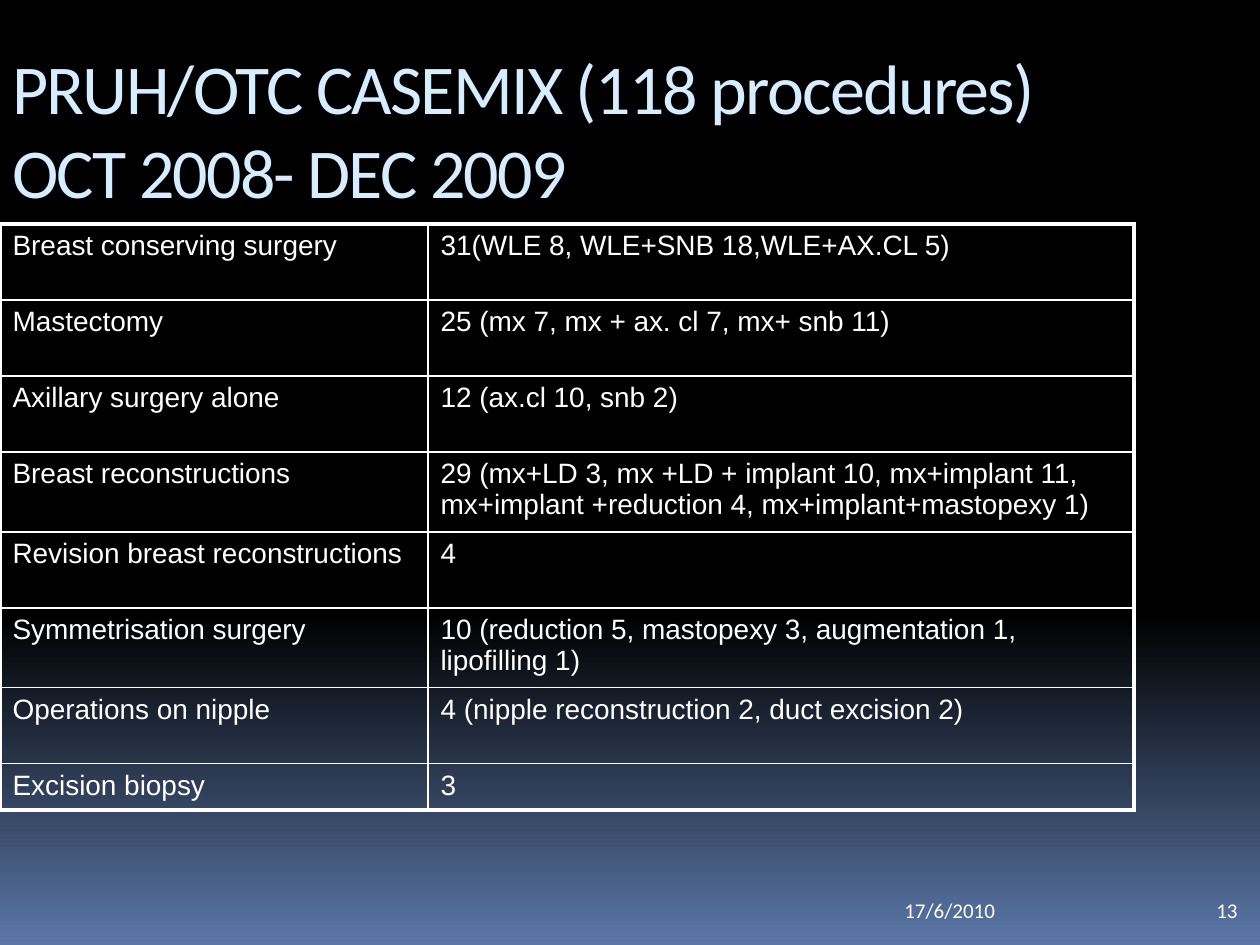
from lxml import etree
from pptx import Presentation
from pptx.dml.color import RGBColor
from pptx.enum.text import MSO_ANCHOR, PP_ALIGN
from pptx.oxml.ns import qn
from pptx.util import Pt

EMU_PER_PX = 914400 // 126
LEFT, RIGHT = PP_ALIGN.LEFT, PP_ALIGN.RIGHT
TOP, MIDDLE = MSO_ANCHOR.TOP, MSO_ANCHOR.MIDDLE
COLORS = {"black": "000000", "blue": "5B77A8", "title": "D6ECFF", "white": "FFFFFF"}
OUTER_BORDER, INNER_BORDER = 2.25, 1
COLUMN_WIDTHS = [428, 706]
ROW_HEIGHTS = [76, 76, 76, 78, 76, 78, 76, 43]
CASEMIX = [
    ("Breast conserving surgery", "31(WLE 8, WLE+SNB 18,WLE+AX.CL 5)"),
    ("Mastectomy", "25 (mx 7, mx + ax. cl 7, mx+ snb 11)"),
    ("Axillary surgery alone", "12 (ax.cl 10, snb 2)"),
    ("Breast reconstructions",
     "29 (mx+LD 3, mx +LD + implant 10, mx+implant 11, "
     "mx+implant +reduction 4, mx+implant+mastopexy 1)"),
    ("Revision breast reconstructions", "4"),
    ("Symmetrisation surgery",
     "10 (reduction 5, mastopexy 3, augmentation 1, lipofilling 1)"),
    ("Operations on nipple", "4 (nipple reconstruction 2, duct excision 2)"),
    ("Excision biopsy", "3"),
]


def px(length):
    return length * EMU_PER_PX


def rgb(name):
    return RGBColor.from_string(COLORS[name])


def set_font(paragraph, name, size, color):
    paragraph.font.name = name
    paragraph.font.size = Pt(size)
    paragraph.font.color.rgb = rgb(color)


def set_background(slide):
    fill = slide.background.fill
    fill.gradient()
    fill.gradient_angle = 270
    for stop, color, position in zip(fill.gradient_stops, ("black", "blue"), (0.65, 1)):
        stop.color.rgb = rgb(color)
        stop.position = position


def add_text(slide, box, text, size, color, align=LEFT, anchor=TOP, spacing=0):
    frame = slide.shapes.add_textbox(*map(px, box)).text_frame
    frame.word_wrap = True
    frame.vertical_anchor = anchor
    paragraph = frame.paragraphs[0]
    paragraph.text = text
    paragraph.alignment = align
    set_font(paragraph, "Calibri", size, color)
    if spacing:
        for run in paragraph.runs:
            run.font._element.set("spc", str(spacing * 100))


def add_border(cell, side, width):
    properties = cell._tc.get_or_add_tcPr()
    line = etree.SubElement(properties, qn(f"a:ln{side}"), w=str(Pt(width)))
    fill = etree.SubElement(line, qn("a:solidFill"))
    etree.SubElement(fill, qn("a:srgbClr"), val=COLORS["white"])


def style_cell(cell, text, outer_sides):
    cell.text = text
    set_font(cell.text_frame.paragraphs[0], "Arial", 16, "white")
    for side in "LRTB":
        add_border(cell, side, OUTER_BORDER if side in outer_sides else INNER_BORDER)
    cell.fill.background()


def add_casemix_table(slide, left, top):
    size = px(sum(COLUMN_WIDTHS)), px(sum(ROW_HEIGHTS))
    table = slide.shapes.add_table(
        len(CASEMIX), len(COLUMN_WIDTHS), px(left), px(top), *size).table
    table.first_row = table.horz_banding = False
    for column, width in zip(table.columns, COLUMN_WIDTHS):
        column.width = px(width)
    last_row = len(CASEMIX) - 1
    for row_index, (height, texts) in enumerate(zip(ROW_HEIGHTS, CASEMIX)):
        table.rows[row_index].height = px(height)
        edges = {0: "T", last_row: "B"}.get(row_index, "")
        for column_index, text in enumerate(texts):
            style_cell(table.cell(row_index, column_index), text,
                       edges + "LR"[column_index])


def main():
    presentation = Presentation()
    presentation.slide_width, presentation.slide_height = px(1260), px(945)
    slide = presentation.slides.add_slide(presentation.slide_layouts[6])
    set_background(slide)
    add_text(slide, (892, 885, 294, 50), "17/6/2010", 12, "white", anchor=MIDDLE)
    add_text(slide, (1187, 885, 63, 50), "13", 12, "white", RIGHT, MIDDLE)
    add_casemix_table(slide, 0, 224)
    add_text(slide, (0, 38, 1134, 158),
             "PRUH/OTC CASEMIX (118 procedures)\vOCT 2008- DEC 2009",
             40, "title", spacing=-1)
    presentation.save("out.pptx")


if __name__ == "__main__":
    main()
